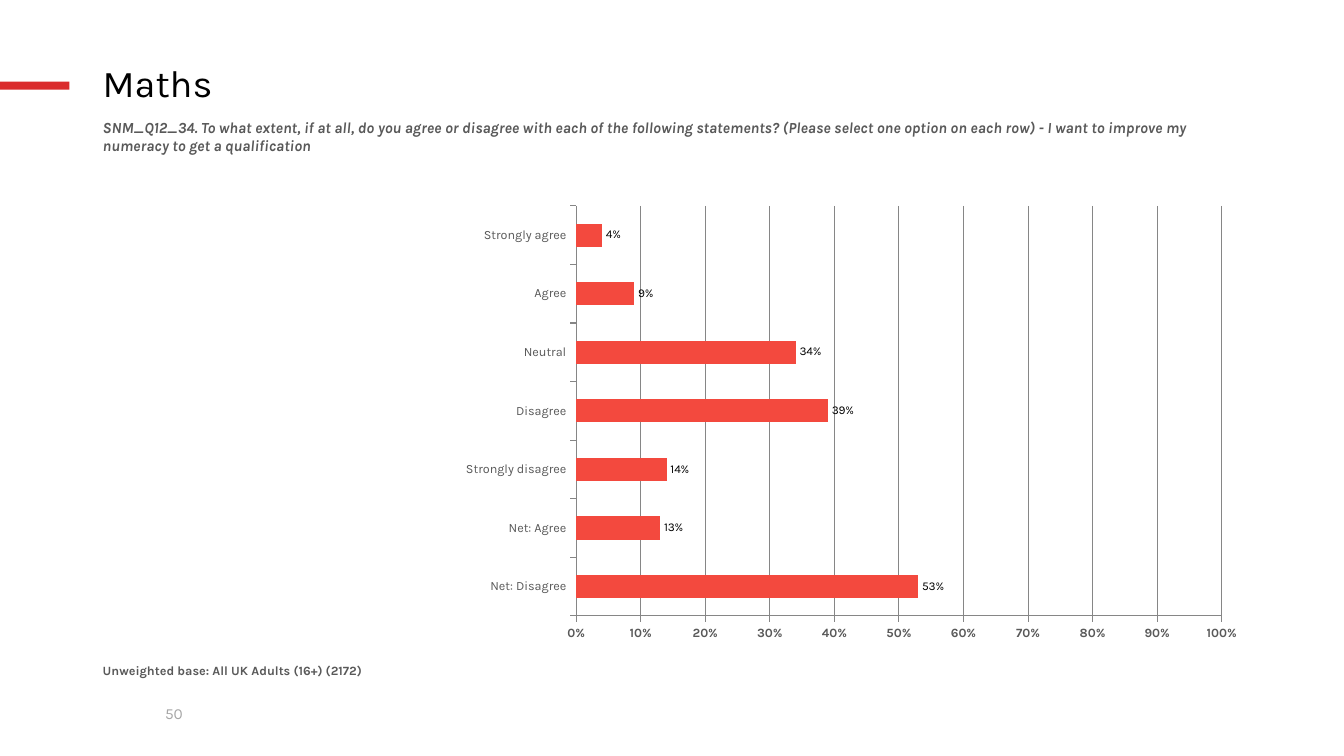
from dataclasses import dataclass

from lxml.etree import SubElement
from pptx import Presentation
from pptx.chart.data import CategoryChartData
from pptx.dml.color import RGBColor
from pptx.enum.chart import XL_CHART_TYPE as ChartType, XL_LABEL_POSITION as LabelPosition
from pptx.enum.chart import XL_TICK_LABEL_POSITION as TickLabelPosition, XL_TICK_MARK as TickMark
from pptx.enum.shapes import MSO_SHAPE as ShapeType
from pptx.enum.text import MSO_ANCHOR as Anchor
from pptx.oxml.ns import qn
from pptx.slide import Slide
from pptx.text.text import Font
from pptx.util import Cm, Pt


@dataclass(frozen=True)
class Theme:
    font: str = "Karla"
    black: str = "000000"
    grey: str = "595959"
    pale_grey: str = "A6A6A6"
    line_grey: str = "868686"
    accent_red: str = "DA2C2D"
    bar_red: str = "F3493E"
    title_size: float = 27
    text_size: float = 11
    small_size: float = 9
    label_size: float = 8.5
    line_width: float = 0.75


@dataclass(frozen=True)
class TextBlock:
    text: str
    left: float
    top: float
    width: float
    height: float
    size: float
    color: str
    bold: bool = False
    italic: bool = False
    anchor: Anchor = Anchor.TOP
    line_spacing: float = 1.0


THEME = Theme()
LEFT, WIDTH = 2.34, 29.21

TEXT_BLOCKS = [
    TextBlock("50", 3.91, 17.63, 1.73, 0.74, THEME.text_size, THEME.pale_grey),
    TextBlock("Maths", LEFT, 1.5, WIDTH, 1.3, THEME.title_size, THEME.black,
              anchor=Anchor.MIDDLE, line_spacing=0.9),
    TextBlock("SNM_Q12_34. To what extent, if at all, do you agree or disagree with each of the "
              "following statements? (Please select one option on each row) - I want to improve "
              "my numeracy to get a qualification",
              LEFT, 2.84, WIDTH, 1.68, THEME.text_size, THEME.grey, bold=True, italic=True),
    TextBlock("Unweighted base: All UK Adults (16+) (2172)",
              LEFT, 16.59, WIDTH, 1.09, THEME.small_size, THEME.grey, bold=True),
]

ANSWERS = {
    "Net: Disagree": 0.53,
    "Net: Agree": 0.13,
    "Strongly disagree": 0.14,
    "Disagree": 0.39,
    "Neutral": 0.34,
    "Agree": 0.09,
    "Strongly agree": 0.04,
}
PLOT_LAYOUT = {
    "layoutTarget": "inner", "xMode": "edge", "yMode": "edge",
    "x": 0.417, "y": 0.034, "w": 0.557, "h": 0.897,
}


def style_font(font: Font, size: float, color: str, bold: bool = False, italic: bool = False) -> None:
    """Apply the theme typeface with the given size, colour and emphasis."""
    font.name = THEME.font
    font.size = Pt(size)
    font.bold = bold
    font.italic = italic
    font.color.rgb = RGBColor.from_string(color)


def add_accent_bar(slide: Slide) -> None:
    """Draw the red bar at the left edge beside the title."""
    bar = slide.shapes.add_shape(ShapeType.RECTANGLE, Cm(0), Cm(2.06), Cm(1.75), Cm(0.2))
    bar.shadow.inherit = False
    bar.fill.solid()
    bar.fill.fore_color.rgb = RGBColor.from_string(THEME.accent_red)
    bar.line.fill.background()


def add_text(slide: Slide, block: TextBlock) -> None:
    """Add one wrapped text box."""
    box = slide.shapes.add_textbox(Cm(block.left), Cm(block.top), Cm(block.width), Cm(block.height))
    frame = box.text_frame
    frame.word_wrap = True
    frame.vertical_anchor = block.anchor
    paragraph = frame.paragraphs[0]
    paragraph.text = block.text
    paragraph.line_spacing = block.line_spacing
    style_font(paragraph.font, block.size, block.color, block.bold, block.italic)


def add_answer_chart(slide: Slide) -> None:
    """Add the bar chart of answer shares."""
    data = CategoryChartData(number_format="0%")
    data.categories = list(ANSWERS)
    data.add_series("Series 1", list(ANSWERS.values()))
    chart = slide.shapes.add_chart(
        ChartType.BAR_CLUSTERED, Cm(LEFT), Cm(4.8), Cm(WIDTH), Cm(11.51), data).chart
    chart.has_legend = False
    chart.has_title = False
    style_font(chart.font, 18, THEME.black)

    value_axis = chart.value_axis
    value_axis.minimum_scale, value_axis.maximum_scale = 0, 1
    value_axis.major_unit = 0.1
    value_axis.has_major_gridlines = True
    value_axis.tick_labels.number_format = "0%"
    value_axis.tick_labels.number_format_is_linked = False
    for axis in (chart.category_axis, value_axis):
        axis.major_tick_mark = TickMark.OUTSIDE
        axis.minor_tick_mark = TickMark.NONE
        axis.tick_label_position = TickLabelPosition.LOW
        style_font(axis.tick_labels.font, THEME.small_size, THEME.grey, bold=axis is value_axis)
    for owner in (chart.category_axis, value_axis, value_axis.major_gridlines):
        owner.format.line.color.rgb = RGBColor.from_string(THEME.line_grey)
        owner.format.line.width = Pt(THEME.line_width)

    plot = chart.plots[0]
    plot.gap_width, plot.overlap = 150, -10
    plot.vary_by_categories = False
    fill = plot.series[0].format.fill
    fill.solid()
    fill.fore_color.rgb = RGBColor.from_string(THEME.bar_red)
    labels = plot.series[0].data_labels
    labels.show_value = True
    labels.position = LabelPosition.OUTSIDE_END
    labels.number_format = "0%"
    labels.number_format_is_linked = False
    style_font(labels.font, THEME.label_size, THEME.black)

    plot_area = chart.element.find(f".//{qn('c:plotArea')}")
    layout = plot_area.find(qn("c:layout"))
    if layout is None:
        layout = SubElement(plot_area, qn("c:layout"))
        plot_area.insert(0, layout)
    manual_layout = SubElement(layout, qn("c:manualLayout"))
    for name, value in PLOT_LAYOUT.items():
        SubElement(manual_layout, qn(f"c:{name}")).set("val", str(value))


def main() -> None:
    """Build and save the slide."""
    presentation = Presentation()
    presentation.slide_width, presentation.slide_height = Cm(33.87), Cm(19.05)
    slide = presentation.slides.add_slide(presentation.slide_layouts[6])
    add_accent_bar(slide)
    for block in TEXT_BLOCKS:
        add_text(slide, block)
    add_answer_chart(slide)
    presentation.save("out.pptx")


if __name__ == "__main__":
    main()
